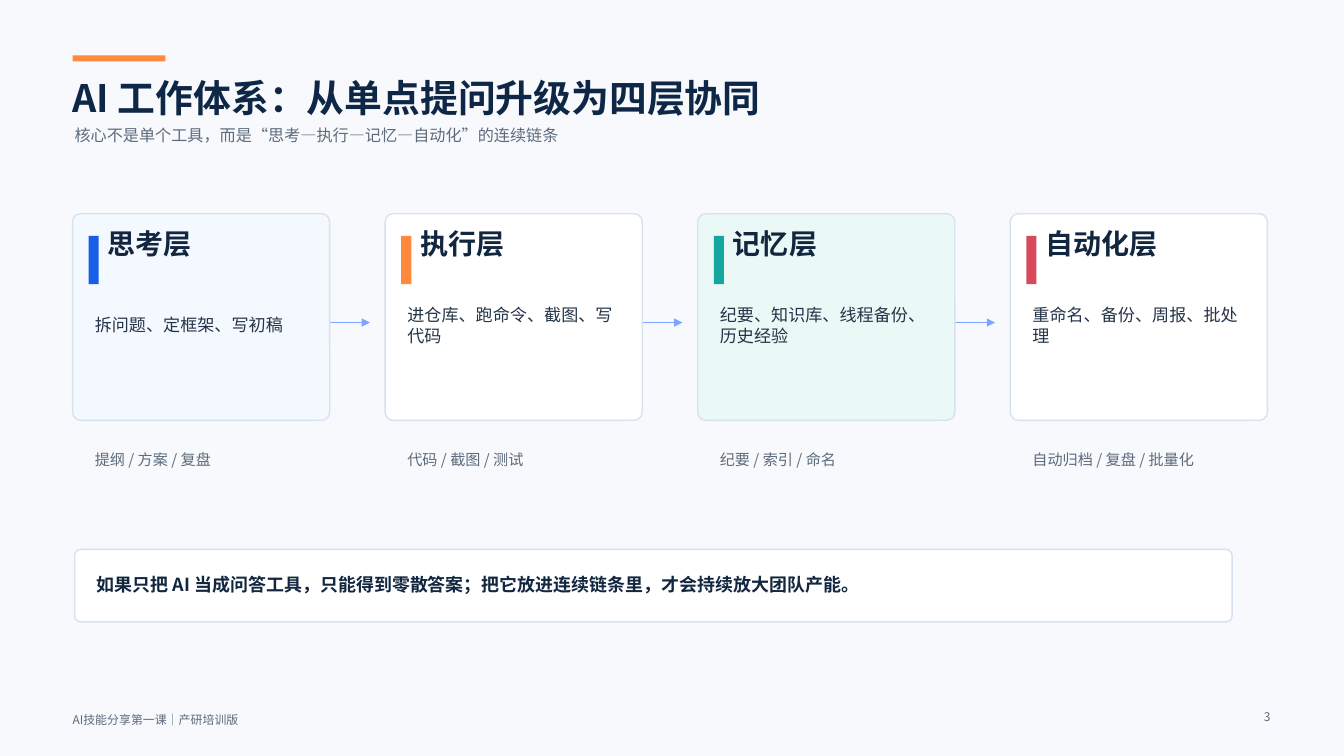
from dataclasses import dataclass

from lxml import etree
from pptx import Presentation
from pptx.dml.color import RGBColor
from pptx.enum.shapes import MSO_CONNECTOR, MSO_SHAPE
from pptx.enum.text import MSO_ANCHOR, PP_ALIGN
from pptx.oxml.ns import qn
from pptx.util import Inches, Pt

RECT = MSO_SHAPE.RECTANGLE
ROUNDED = MSO_SHAPE.ROUNDED_RECTANGLE
STRAIGHT = MSO_CONNECTOR.STRAIGHT
MIDDLE = MSO_ANCHOR.MIDDLE
LEFT, RIGHT = PP_ALIGN.LEFT, PP_ALIGN.RIGHT


@dataclass(frozen=True)
class Theme:
    font: str = "Noto Sans CJK SC"
    background: str = "F7F9FC"
    title: str = "0F2747"
    heading: str = "12263F"
    body: str = "243447"
    muted: str = "5D6B7C"
    border: str = "D7E2F0"
    arrow: str = "7CA5FF"
    white: str = "FFFFFF"
    pale_blue: str = "F4F8FF"
    pale_teal: str = "EAF8F6"
    blue: str = "175FE6"
    orange: str = "FF8A3D"
    teal: str = "16A6A0"
    red: str = "D84A5B"
    title_size: float = 27
    heading_size: float = 20
    message_size: float = 12.8
    body_size: float = 12.2
    subtitle_size: float = 11.5
    output_size: float = 10.8
    footer_size: float = 8.5


THEME = Theme()

# Heading, work done, outputs, card fill, accent
LAYERS = [
    ("思考层", "拆问题、定框架、写初稿", "提纲 / 方案 / 复盘",
     THEME.pale_blue, THEME.blue),
    ("执行层", "进仓库、跑命令、截图、写代码", "代码 / 截图 / 测试",
     THEME.white, THEME.orange),
    ("记忆层", "纪要、知识库、线程备份、历史经验", "纪要 / 索引 / 命名",
     THEME.pale_teal, THEME.teal),
    ("自动化层", "重命名、备份、周报、批处理", "自动归档 / 复盘 / 批量化",
     THEME.white, THEME.red),
]
LAYER_LEFT, LAYER_PITCH = 0.72, 3.1


def rgb(value):
    return RGBColor.from_string(value)


def add_block(slide, kind, left, top, width, height, fill):
    block = slide.shapes.add_shape(
        kind, Inches(left), Inches(top), Inches(width), Inches(height))
    block.shadow.inherit = False
    block.fill.solid()
    block.fill.fore_color.rgb = rgb(fill)
    block.line.fill.background()
    return block


def add_panel(slide, left, top, width, height, fill, radius):
    """Bordered rounded box with its corner radius in inches."""
    panel = add_block(slide, ROUNDED, left, top, width, height, fill)
    panel.adjustments[0] = radius / min(width, height)
    panel.line.color.rgb = rgb(THEME.border)
    panel.line.width = Pt(1)


def add_text(slide, left, top, width, height, text, size, color,
             bold=False, align=LEFT):
    frame = slide.shapes.add_textbox(
        Inches(left), Inches(top), Inches(width), Inches(height)).text_frame
    frame.word_wrap = True
    frame.vertical_anchor = MIDDLE
    frame.margin_left = frame.margin_right = 0
    frame.margin_top = frame.margin_bottom = 0
    paragraph = frame.paragraphs[0]
    paragraph.text = text
    paragraph.alignment = align
    font = paragraph.font
    font.size = Pt(size)
    font.bold = bold
    font.color.rgb = rgb(color)
    font.name = THEME.font
    latin = paragraph._p.find(".//" + qn("a:latin"))
    east_asian = etree.Element(qn("a:ea"), typeface=THEME.font)
    latin.addnext(east_asian)


def add_arrow(slide, left, y, length):
    arrow = slide.shapes.add_connector(
        STRAIGHT, Inches(left), Inches(y), Inches(left + length), Inches(y))
    arrow.line.color.rgb = rgb(THEME.arrow)
    arrow.line.width = Pt(1)
    etree.SubElement(arrow.line._get_or_add_ln(), qn("a:tailEnd"),
                     type="triangle")
    etree.SubElement(arrow._element.spPr, qn("a:effectLst"))


def add_header(slide):
    add_block(slide, RECT, 0.72, 0.55, 0.92, 0.06, THEME.orange)
    add_text(slide, 0.72, 0.73, 8.6, 0.48,
             "AI 工作体系：从单点提问升级为四层协同",
             THEME.title_size, THEME.title, bold=True)
    add_text(slide, 0.74, 1.22, 8.8, 0.24,
             "核心不是单个工具，而是“思考—执行—记忆—自动化”的连续链条",
             THEME.subtitle_size, THEME.muted)


def add_footer(slide):
    add_text(slide, 0.72, 7.05, 4.4, 0.18, "AI技能分享第一课｜产研培训版",
             THEME.footer_size, THEME.muted)
    add_text(slide, 12.38, 7.02, 0.22, 0.18, "3",
             THEME.footer_size, THEME.muted, align=RIGHT)


def add_layer(slide, left, heading, work, outputs, fill, accent):
    add_panel(slide, left, 2.12, 2.55, 2.05, fill, radius=0.08)
    add_block(slide, RECT, left + 0.16, 2.34, 0.1, 0.48, accent)
    add_text(slide, left + 0.35, 2.26, 1.8, 0.3, heading,
             THEME.heading_size, THEME.heading, bold=True)
    add_text(slide, left + 0.22, 2.95, 2.1, 0.55, work,
             THEME.body_size, THEME.body)
    add_text(slide, left + 0.22, 4.45, 2.1, 0.22, outputs,
             THEME.output_size, THEME.muted)


def add_message(slide):
    add_panel(slide, 0.74, 5.45, 11.48, 0.72, THEME.white, radius=0.06)
    add_text(slide, 0.96, 5.67, 11, 0.26,
             "如果只把 AI 当成问答工具，只能得到零散答案；"
             "把它放进连续链条里，才会持续放大团队产能。",
             THEME.message_size, THEME.heading, bold=True)


def main():
    deck = Presentation()
    deck.slide_width, deck.slide_height = Inches(13.33), Inches(7.5)
    slide = deck.slides.add_slide(deck.slide_layouts[6])
    slide.background.fill.solid()
    slide.background.fill.fore_color.rgb = rgb(THEME.background)

    add_header(slide)
    add_footer(slide)
    lefts = [LAYER_LEFT + i * LAYER_PITCH for i in range(len(LAYERS))]
    # Arrows go first so that the cards cover their starts
    for left in lefts[:-1]:
        add_arrow(slide, left + 2.4, 3.2, 0.55)
    for left, layer in zip(lefts, LAYERS):
        add_layer(slide, left, *layer)
    add_message(slide)
    deck.save("out.pptx")


if __name__ == "__main__":
    main()
